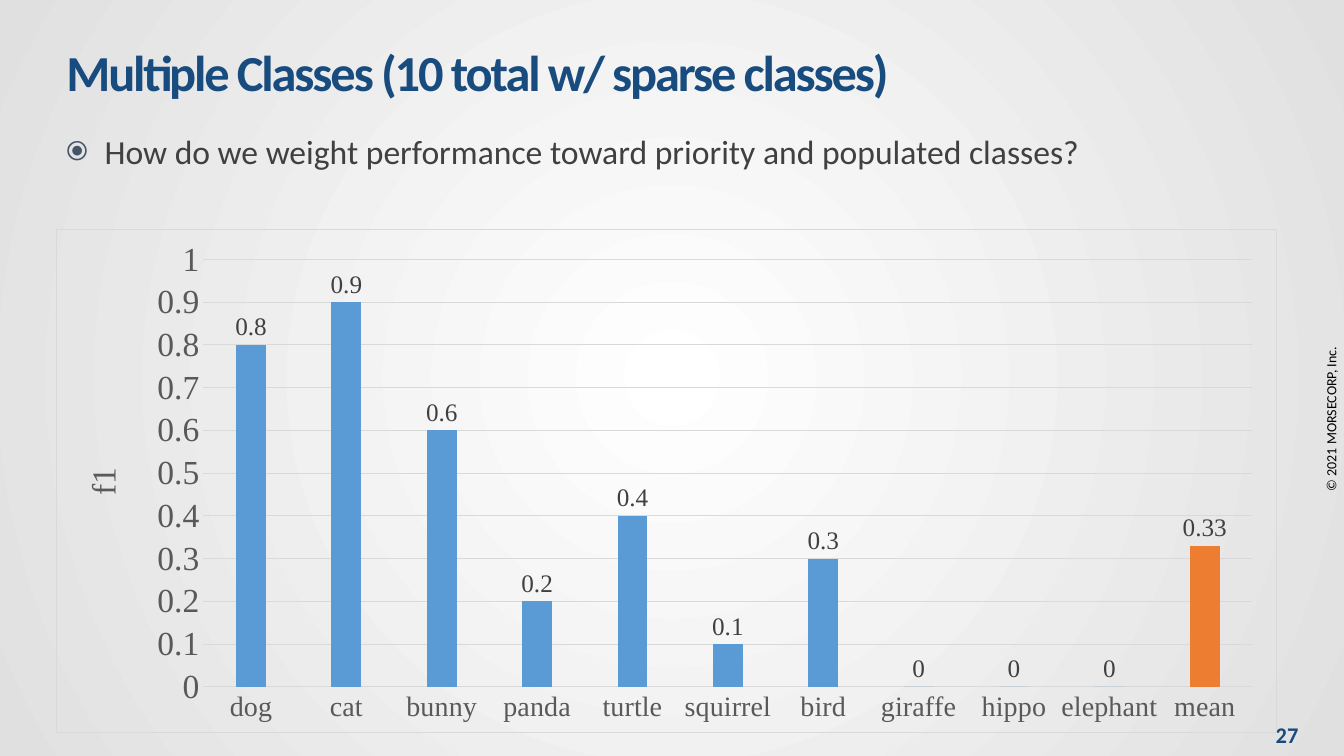
import dataclasses

import lxml.etree
import pptx
import pptx.chart.data
import pptx.dml.color
import pptx.enum.chart
import pptx.enum.text
import pptx.oxml
import pptx.oxml.ns
import pptx.util

Inches = pptx.util.Inches
Pt = pptx.util.Pt
qn = pptx.oxml.ns.qn
Align = pptx.enum.text.PP_ALIGN
Anchor = pptx.enum.text.MSO_ANCHOR


@dataclasses.dataclass(frozen=True)
class Theme:
    """Colours, fonts and type sizes of the slide."""
    navy: str = "184B7E"
    text: str = "404040"
    bullet: str = "44546A"
    axis: str = "595959"
    rule: str = "D9D9D9"
    black: str = "000000"
    centre: str = "FFFFFF"
    edge: str = "E0E0E0"
    bar: str = "5B9BD5"
    mean: str = "ED7D31"
    text_font: str = "Calibri"
    chart_font: str = "Times New Roman"
    title_size: int = 36
    body_size: int = 24
    number_size: int = 16
    legal_size: int = 10
    value_size: int = 24
    category_size: int = 20
    label_size: int = 18
    rule_width: float = 0.75


THEME = Theme()
SCORES = {
    "dog": 0.8, "cat": 0.9, "bunny": 0.6, "panda": 0.2, "turtle": 0.4,
    "squirrel": 0.1, "bird": 0.3, "giraffe": 0, "hippo": 0, "elephant": 0,
    "mean": 0.33,
}


def rgb(colour):
    """Turn a hex string into a colour."""
    return pptx.dml.color.RGBColor.from_string(colour)


def set_font(font, name, size, colour, bold=False):
    """Set face, size, colour and weight of a font."""
    font.name, font.size, font.bold = name, Pt(size), bold
    font.color.rgb = rgb(colour)


def set_line(line):
    """Give a line the thin grey rule style."""
    line.color.rgb = rgb(THEME.rule)
    line.width = Pt(THEME.rule_width)


def set_background(page):
    """Fill the page with a radial gradient."""
    fill = page.background.fill
    fill.gradient()
    for stop, colour in zip(fill.gradient_stops, (THEME.centre, THEME.edge)):
        stop.color.rgb = rgb(colour)
    gradient = page.element.find(".//" + qn("a:gradFill"))
    gradient.remove(gradient.find(qn("a:lin")))
    circle = lxml.etree.SubElement(gradient, qn("a:path"), {"path": "circle"})
    lxml.etree.SubElement(
        circle, qn("a:fillToRect"), dict.fromkeys("ltrb", "50000"))


def add_text(page, text, place, size, colour, bold=False,
             align=Align.LEFT, anchor=Anchor.MIDDLE, bulleted=False):
    """Add a one-paragraph text box and return it."""
    box = page.shapes.add_textbox(*map(Inches, place))
    frame = box.text_frame
    frame.word_wrap, frame.vertical_anchor = True, anchor
    para = frame.paragraphs[0]
    para.text, para.alignment = text, align
    if bulleted:
        add_bullet(para)
    set_font(para.font, THEME.text_font, size, colour, bold)
    return box


def add_bullet(para):
    """Give a paragraph a hanging ring bullet."""
    properties = para._p.get_or_add_pPr()
    indent = Inches(0.38)
    properties.set("marL", str(indent))
    properties.set("indent", str(-indent))
    colour = lxml.etree.SubElement(properties, qn("a:buClr"))
    lxml.etree.SubElement(colour, qn("a:srgbClr"), val=THEME.bullet)
    lxml.etree.SubElement(properties, qn("a:buSzPct"), val="80000")
    lxml.etree.SubElement(
        properties, qn("a:buFont"), typeface=THEME.text_font)
    lxml.etree.SubElement(properties, qn("a:buChar"), char="⦿")


def set_plot_layout(chart, **bounds):
    """Place the inner plot area by fractions of the chart."""
    plot_area = chart._chartSpace.find(".//" + qn("c:plotArea"))
    for old in plot_area.findall(qn("c:layout")):
        plot_area.remove(old)
    layout = lxml.etree.Element(qn("c:layout"))
    manual = lxml.etree.SubElement(layout, qn("c:manualLayout"))
    settings = {"layoutTarget": "inner", "xMode": "edge", "yMode": "edge"}
    for name, value in {**settings, **bounds}.items():
        lxml.etree.SubElement(manual, qn("c:" + name), val=str(value))
    plot_area.insert(0, layout)


def set_chart_border(chart):
    """Draw a thin frame around an unfilled chart."""
    frame = pptx.oxml.parse_xml(
        f'<c:spPr {pptx.oxml.ns.nsdecls("c", "a")}><a:noFill/>'
        f'<a:ln w="{Pt(THEME.rule_width)}"><a:solidFill>'
        f'<a:srgbClr val="{THEME.rule}"/></a:solidFill></a:ln></c:spPr>')
    chart._chartSpace.find(qn("c:chart")).addnext(frame)


def style_axes(chart):
    """Style both axes, the gridlines and the value title."""
    none = pptx.enum.chart.XL_TICK_MARK.NONE
    categories, values = chart.category_axis, chart.value_axis
    for axis, size in ((categories, THEME.category_size),
                       (values, THEME.value_size)):
        axis.major_tick_mark = axis.minor_tick_mark = none
        set_font(axis.tick_labels.font, THEME.chart_font, size, THEME.axis)
    set_line(categories.format.line)
    values.minimum_scale, values.maximum_scale, values.major_unit = 0, 1, 0.1
    values.format.line.fill.background()
    set_line(values.major_gridlines.format.line)
    para = values.axis_title.text_frame.paragraphs[0]
    para.text = "f1"
    set_font(para.font, THEME.chart_font, THEME.value_size, THEME.axis)


def add_score_chart(page, place):
    """Add the column chart of scores by class."""
    data = pptx.chart.data.CategoryChartData()
    data.categories = list(SCORES)
    data.add_series("Series 1", list(SCORES.values()))
    chart = page.shapes.add_chart(
        pptx.enum.chart.XL_CHART_TYPE.COLUMN_CLUSTERED,
        *map(Inches, place), data).chart
    chart.has_legend = chart.has_title = False
    set_font(chart.font, THEME.chart_font, THEME.label_size, THEME.black)
    set_chart_border(chart)
    set_plot_layout(chart, x=0.12, y=0.06, w=0.86, h=0.85)
    style_axes(chart)
    plot = chart.plots[0]
    plot.gap_width, plot.overlap, plot.vary_by_categories = 219, -27, False
    series = plot.series[0]
    mean = series.points[list(SCORES).index("mean")]
    for item, colour in ((series, THEME.bar), (mean, THEME.mean)):
        item.format.fill.solid()
        item.format.fill.fore_color.rgb = rgb(colour)
    labels = series.data_labels
    labels.show_value = True
    labels.position = pptx.enum.chart.XL_LABEL_POSITION.OUTSIDE_END
    set_font(labels.font, THEME.chart_font, THEME.label_size, THEME.text)


def main():
    """Build the slide and save it."""
    deck = pptx.Presentation()
    deck.slide_width, deck.slide_height = Inches(13.33), Inches(7.5)
    page = deck.slides.add_slide(deck.slide_layouts[6])
    set_background(page)
    legal = add_text(page, "© 2021 MORSECORP, Inc.", (10.72, 4.02, 4.96, 0.27),
                     THEME.legal_size, THEME.black, align=Align.CENTER)
    legal.rotation = 270
    title = add_text(page, "Multiple Classes (10 total w/ sparse classes)",
                     (0.56, 0.33, 11.53, 0.75), THEME.title_size, THEME.navy,
                     bold=True)
    span = title.text_frame.paragraphs[0].runs[0]
    span.font._element.set("spc", "-150")
    add_text(page, "How do we weight performance toward priority and "
             "populated classes?", (0.56, 1.25, 12.22, 0.8), THEME.body_size,
             THEME.text, anchor=Anchor.TOP, bulleted=True)
    add_text(page, "27", (12.52, 7.15, 0.49, 0.28), THEME.number_size,
             THEME.navy, bold=True, align=Align.CENTER)
    add_score_chart(page, (0.56, 2.27, 12.11, 5))
    deck.save("out.pptx")


if __name__ == "__main__":
    main()
